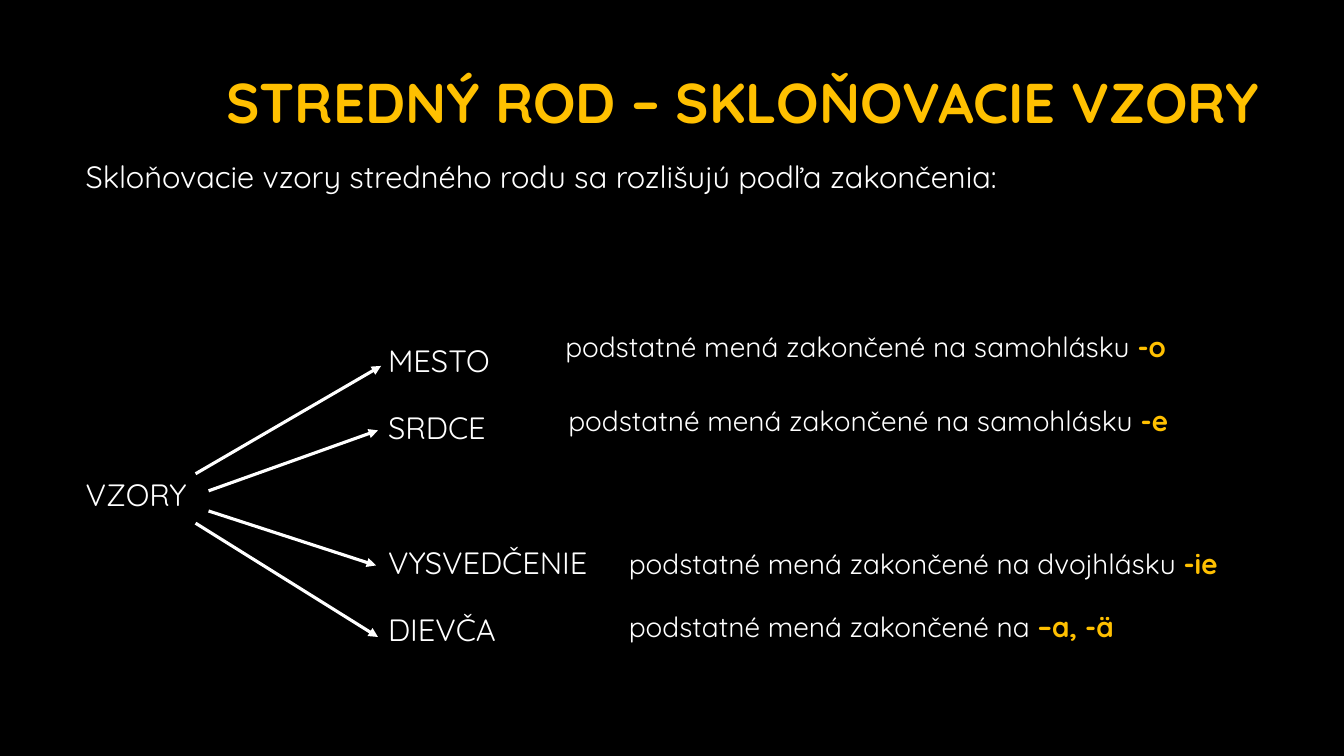
from lxml import etree
from pptx import Presentation
from pptx.dml.color import RGBColor
from pptx.enum import dml, shapes, text
from pptx.oxml import ns
from pptx.util import Pt

BLACK = RGBColor(0x00, 0x00, 0x00)
WHITE = RGBColor(0xFF, 0xFF, 0xFF)
GOLD = RGBColor(0xFF, 0xC0, 0x00)
FACE = "Quicksand"

INTRO = "Skloňovacie vzory stredného rodu sa rozlišujú podľa zakončenia:"
STEM = "podstatné mená zakončené na "
GAP = 8.4
INDENT = 216

WORDS = [
    ("MESTO", INDENT, 91.3),
    ("SRDCE", INDENT, GAP),
    ("VZORY", 0, GAP),
    ("VYSVEDČENIE", INDENT, GAP),
    ("DIEVČA", INDENT, GAP),
]
RAYS = [
    (0, 77, 132.5, 0),
    (9.3, 89.2, 130.3, 46),
    (9.3, 103.6, 128.9, 142.5),
    (0, 112.3, 130.3, 193.6),
]
NOTES = [
    (0, 0, "samohlásku ", "-o"),
    (2.2, 52.6, "samohlásku ", "-e"),
    (45.4, 154.8, "dvojhlásku ", "-ie"),
    (45.4, 200.2, "", "–a, -ä"),
]


def place(shape, box):
    """Move a shape into a box given in points."""
    shape.left, shape.top, shape.width, shape.height = map(Pt, box)
    frame = shape.text_frame
    frame.word_wrap = True
    frame.auto_size = text.MSO_AUTO_SIZE.NONE
    return frame


def style(font, size, color, bold=False):
    """Set face, size, colour and weight of a font."""
    font.name, font.size, font.bold = FACE, Pt(size), bold
    font.color.rgb = color


def head(slide, box):
    """Fill the title placeholder."""
    frame = place(slide.shapes.title, box)
    frame.vertical_anchor = text.MSO_ANCHOR.MIDDLE
    para = frame.paragraphs[0]
    para.text = "STREDNÝ ROD – SKLOŇOVACIE VZORY"
    para.alignment = text.PP_ALIGN.RIGHT
    para.line_spacing = 0.9
    style(para.font, 40, GOLD, True)


def line(para, words, indent, before, space):
    """Write one plain body line at an indent."""
    para.text = words
    props = para._p.get_or_add_pPr()
    props.set("marL", str(Pt(indent)))
    props.set("indent", "0")
    etree.SubElement(props, ns.qn("a:buNone"))
    para.line_spacing = space
    para.space_before = Pt(before)
    style(para.font, 22, WHITE)


def body(slide, box):
    """Fill the body placeholder with the intro and the pattern words."""
    frame = place(slide.placeholders[1], box)
    frame.vertical_anchor = text.MSO_ANCHOR.TOP
    line(frame.paragraphs[0], INTRO, 0, 0, 0.9)
    for word, indent, before in WORDS:
        line(frame.add_paragraph(), word, indent, before, 1.5)


def fan(slide, box):
    """Draw the arrows that lead to the pattern words."""
    left, top = box
    for x, y, tox, toy in RAYS:
        ray = slide.shapes.add_connector(
            shapes.MSO_CONNECTOR.STRAIGHT,
            Pt(left + x), Pt(top + y), Pt(left + tox), Pt(top + toy))
        ray.line.color.rgb = WHITE
        ray.line.width = Pt(2.25)
        ray.line.dash_style = dml.MSO_LINE.SOLID
        props = ray._element.spPr
        tail = etree.SubElement(props.find(ns.qn("a:ln")), ns.qn("a:tailEnd"))
        tail.set("type", "triangle")
        etree.SubElement(props, ns.qn("a:effectLst"))


def notes(slide, box):
    """Add a text with a highlighted ending for each pattern."""
    left, top, width, height = box
    for x, y, kind, end in NOTES:
        note = slide.shapes.add_textbox(0, 0, 0, 0)
        frame = place(note, (left + x, top + y, width, height))
        para = frame.paragraphs[0]
        for words, color, bold in ((STEM + kind, WHITE, False), (end, GOLD, True)):
            run = para.add_run()
            run.text = words
            style(run.font, 20, color, bold)


def main():
    """Build the slide and save it."""
    deck = Presentation()
    deck.slide_width, deck.slide_height = Pt(960), Pt(540)
    slide = deck.slides.add_slide(deck.slide_layouts[1])
    fill = slide.background.fill
    fill.solid()
    fill.fore_color.rgb = BLACK
    body(slide, (54, 112.3, 851.8, 397.4))
    head(slide, (149, 38.9, 757.4, 73.4))
    fan(slide, (139.7, 261.4))
    notes(slide, (396.7, 231.8, 500.4, 31.7))
    deck.save("out.pptx")


if __name__ == "__main__":
    main()
